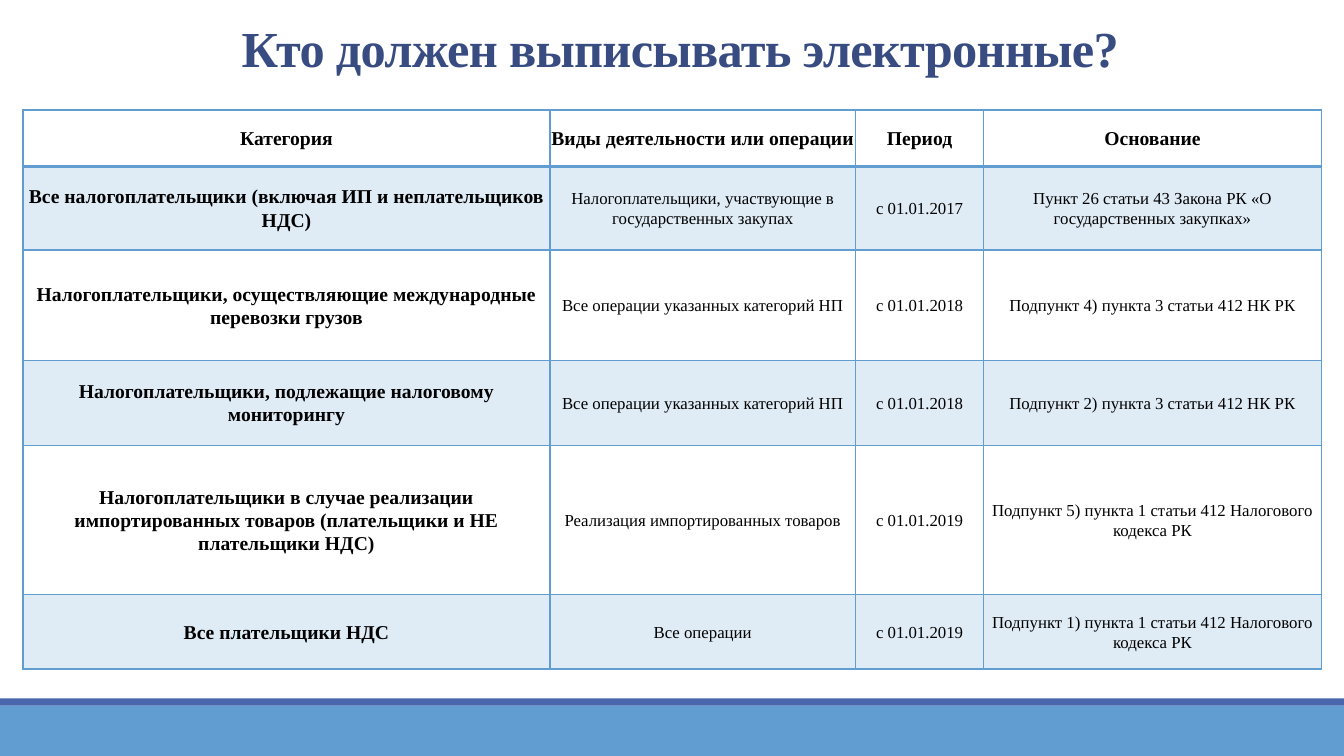
from dataclasses import dataclass

from lxml import etree
from pptx import Presentation
from pptx.dml.color import RGBColor
from pptx.enum.shapes import MSO_SHAPE
from pptx.enum.text import MSO_ANCHOR, MSO_AUTO_SIZE, PP_ALIGN
from pptx.oxml.ns import qn
from pptx.slide import Slide
from pptx.table import _Cell
from pptx.util import Cm, Pt

RECTANGLE = MSO_SHAPE.RECTANGLE
MIDDLE = MSO_ANCHOR.MIDDLE
FIT_SHAPE = MSO_AUTO_SIZE.SHAPE_TO_FIT_TEXT
CENTER = PP_ALIGN.CENTER


@dataclass(frozen=True)
class Theme:
    font: str = "Times New Roman"
    title_color: str = "384C81"
    text_color: str = "000000"
    accent: str = "629DD1"
    stripe: str = "4A66AC"
    title_size: int = 36
    heading_size: int = 14
    body_size: int = 12
    band_opacity: int = 20
    border_width: int = 1
    header_rule_width: int = 2


@dataclass(frozen=True)
class Bar:
    top: float
    height: float
    color: str


@dataclass(frozen=True)
class InvoiceRule:
    height: float
    category: str
    operations: str
    period: str
    basis: str

    def texts(self) -> tuple[str, ...]:
        return self.category, self.operations, self.period, self.basis


THEME = Theme()
SLIDE_WIDTH, SLIDE_HEIGHT = 33.87, 19.05
COLUMN_WIDTHS = (13.28, 7.7, 3.23, 8.51)
BARS = (Bar(17.78, 1.27, THEME.accent), Bar(17.6, 0.18, THEME.stripe))
ALL_OPERATIONS = "Все операции указанных категорий НП"
ROWS = (
    InvoiceRule(1.42, "Категория", "Виды деятельности или операции", "Период", "Основание"),
    InvoiceRule(
        2.11,
        "Все налогоплательщики (включая ИП и неплательщиков НДС)",
        "Налогоплательщики, участвующие в государственных закупах",
        "с 01.01.2017",
        "Пункт 26 статьи 43 Закона РК «О государственных закупках»",
    ),
    InvoiceRule(
        2.79,
        "Налогоплательщики, осуществляющие международные перевозки грузов",
        ALL_OPERATIONS,
        "с 01.01.2018",
        "Подпункт 4) пункта 3 статьи 412 НК РК",
    ),
    InvoiceRule(
        2.13,
        "Налогоплательщики, подлежащие налоговому мониторингу",
        ALL_OPERATIONS,
        "с 01.01.2018",
        "Подпункт 2) пункта 3 статьи 412 НК РК",
    ),
    InvoiceRule(
        3.76,
        "Налогоплательщики в случае реализации импортированных товаров "
        "(плательщики и НЕ плательщики НДС)",
        "Реализация импортированных товаров",
        "с 01.01.2019",
        "Подпункт 5) пункта 1 статьи 412 Налогового кодекса РК",
    ),
    InvoiceRule(
        1.88,
        "Все плательщики НДС",
        "Все операции",
        "с 01.01.2019",
        "Подпункт 1) пункта 1 статьи 412 Налогового кодекса РК",
    ),
)


def add_bar(slide: Slide, bar: Bar) -> None:
    shape = slide.shapes.add_shape(
        RECTANGLE, Cm(0), Cm(bar.top), Cm(SLIDE_WIDTH), Cm(bar.height)
    )
    shape.shadow.inherit = False
    shape.fill.solid()
    shape.fill.fore_color.rgb = RGBColor.from_string(bar.color)
    shape.line.fill.background()


def style_paragraph(paragraph, size: int, color: str, bold: bool) -> None:
    paragraph.alignment = CENTER
    font = paragraph.font
    font.name = THEME.font
    font.size = Pt(size)
    font.bold = bold
    font.color.rgb = RGBColor.from_string(color)


def set_border(cell: _Cell, side: str, width: int) -> None:
    properties = cell._tc.get_or_add_tcPr()
    line = etree.SubElement(properties, qn(f"a:ln{side}"), w=str(Pt(width)))
    fill = etree.SubElement(line, qn("a:solidFill"))
    etree.SubElement(fill, qn("a:srgbClr"), val=THEME.accent)


def fill_band(cell: _Cell) -> None:
    cell.fill.solid()
    cell.fill.fore_color.rgb = RGBColor.from_string(THEME.accent)
    color = cell._tc.get_or_add_tcPr().find(qn("a:solidFill"))[0]
    etree.SubElement(color, qn("a:alpha"), val=str(THEME.band_opacity * 1000))


def format_cell(cell: _Cell, text: str, row: int, column: int) -> None:
    heading = row == 0 or column == 0
    cell.margin_left = cell.margin_right = cell.margin_top = cell.margin_bottom = Cm(0)
    cell.vertical_anchor = MIDDLE
    cell.text = text
    paragraph = cell.text_frame.paragraphs[0]
    paragraph.line_spacing = 1.07
    paragraph.space_after = Pt(8)
    size = THEME.heading_size if heading else THEME.body_size
    style_paragraph(paragraph, size, THEME.text_color, heading)
    for side in "LRTB":
        under_header = (row, side) in ((0, "B"), (1, "T"))
        set_border(cell, side, THEME.header_rule_width if under_header else THEME.border_width)
    if row % 2:
        fill_band(cell)
    else:
        cell.fill.background()


def add_rules_table(slide: Slide) -> None:
    width = sum(COLUMN_WIDTHS)
    height = sum(rule.height for rule in ROWS)
    table = slide.shapes.add_table(
        len(ROWS), len(COLUMN_WIDTHS), Cm(0.58), Cm(2.77), Cm(width), Cm(height)
    ).table
    table.horz_banding = False
    for column, column_width in zip(table.columns, COLUMN_WIDTHS):
        column.width = Cm(column_width)
    for row, rule in enumerate(ROWS):
        table.rows[row].height = Cm(rule.height)
        for column, text in enumerate(rule.texts()):
            format_cell(table.cell(row, column), text, row, column)


def add_title(slide: Slide) -> None:
    frame = slide.shapes.add_textbox(Cm(5.59), Cm(0.3), Cm(23.11), Cm(1.8)).text_frame
    frame.word_wrap = True
    frame.auto_size = FIT_SHAPE
    paragraph = frame.paragraphs[0]
    run = paragraph.add_run()
    run.text = "Кто должен выписывать электронные?"
    run._r.get_or_add_rPr().set("spc", "-50")
    style_paragraph(paragraph, THEME.title_size, THEME.title_color, True)


def main() -> None:
    presentation = Presentation()
    presentation.slide_width = Cm(SLIDE_WIDTH)
    presentation.slide_height = Cm(SLIDE_HEIGHT)
    slide = presentation.slides.add_slide(presentation.slide_layouts[6])
    for bar in BARS:
        add_bar(slide, bar)
    add_rules_table(slide)
    add_title(slide)
    presentation.save("out.pptx")


if __name__ == "__main__":
    main()
